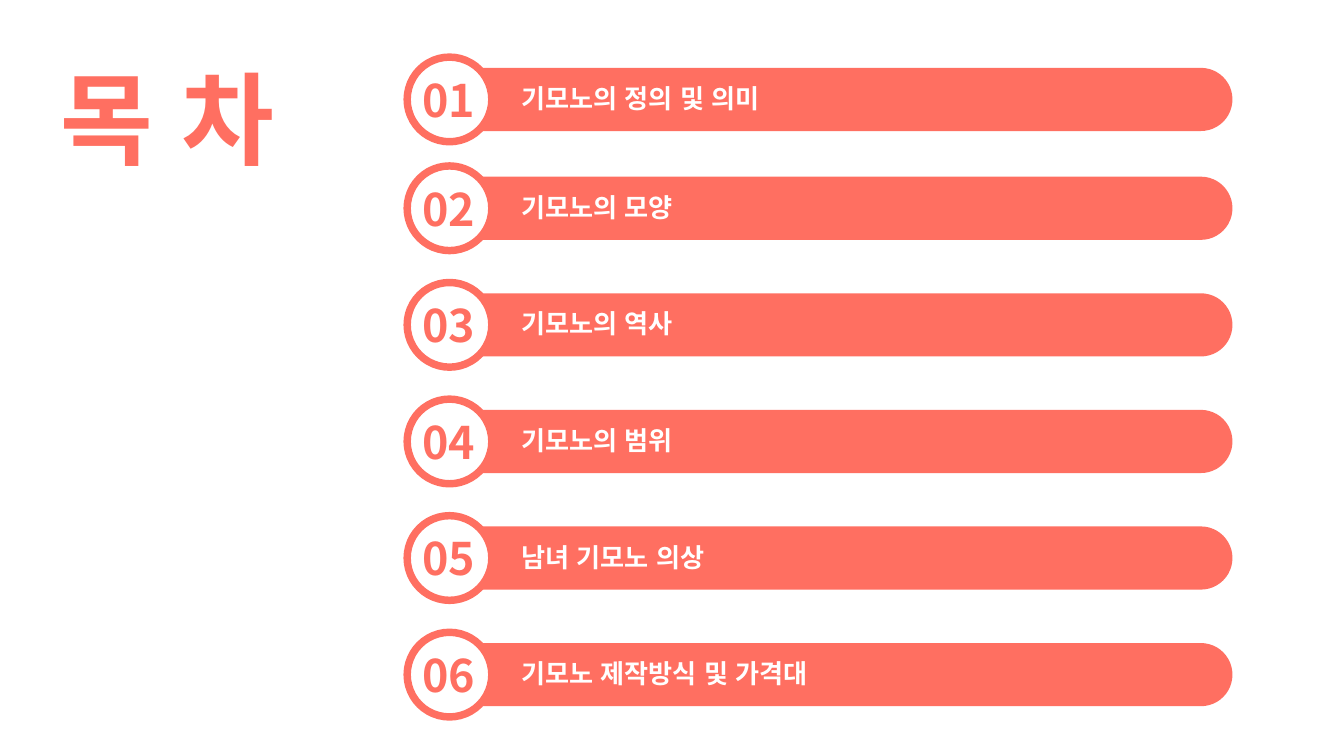
from lxml import etree
from pptx import Presentation
from pptx.dml.color import RGBColor
from pptx.enum.lang import MSO_LANGUAGE_ID
from pptx.enum.shapes import MSO_SHAPE
from pptx.enum.text import MSO_ANCHOR, MSO_AUTO_SIZE, PP_ALIGN
from pptx.oxml.ns import qn
from pptx.util import Inches, Pt

CORAL = RGBColor(0xFF, 0x6F, 0x61)
WHITE = RGBColor(0xFF, 0xFF, 0xFF)
FONT = "Noto Sans CJK KR"
KOREAN = MSO_LANGUAGE_ID.KOREAN
HALF_ROUND_BAR = MSO_SHAPE.ROUND_2_SAME_RECTANGLE
OVAL = MSO_SHAPE.OVAL
MIDDLE, TOP = MSO_ANCHOR.MIDDLE, MSO_ANCHOR.TOP
LEFT, CENTER = PP_ALIGN.LEFT, PP_ALIGN.CENTER
GROW = MSO_AUTO_SIZE.SHAPE_TO_FIT_TEXT

TOPICS = [
    "기모노의 정의 및 의미",
    "기모노의 모양",
    "기모노의 역사",
    "기모노의 범위",
    "남녀 기모노 의상",
    "기모노 제작방식 및 가격대",
]
# The first row stands apart; the others are evenly spaced
FIRST_ROW, SECOND_ROW, LAST_ROW = 0.74, 1.55, 5.02
ROW_PITCH = (LAST_ROW - SECOND_ROW) / (len(TOPICS) - 2)


class ContentsSlide:
    def __init__(self, slide):
        self.slide = slide

    def shape(self, parent, preset, left, top, width, height, fill):
        shape = parent.shapes.add_shape(
            preset, Inches(left), Inches(top), Inches(width), Inches(height))
        shape.shadow.inherit = False
        shape.fill.solid()
        shape.fill.fore_color.rgb = fill
        shape.line.fill.background()
        return shape

    def bar(self, parent, left, middle, length, thickness):
        # A tall shape turned a quarter so its round end points right
        bar = self.shape(parent, HALF_ROUND_BAR,
                         left + (length - thickness) / 2, middle - length / 2,
                         thickness, length, CORAL)
        bar.adjustments[0] = 0.5
        bar.adjustments[1] = 0
        bar.rotation = 90

    def ring(self, parent, left, middle, diameter):
        ring = self.shape(parent, OVAL, left, middle - diameter / 2,
                          diameter, diameter, WHITE)
        ring.line.color.rgb = CORAL
        ring.line.width = Pt(4)

    def text(self, parent, words, left, top, width, height, size, color,
             align=LEFT, anchor=MIDDLE, wrap=True, inset=0.05):
        box = parent.shapes.add_textbox(
            Inches(left), Inches(top), Inches(width), Inches(height))
        frame = box.text_frame
        frame.word_wrap = wrap
        frame.auto_size = GROW
        frame.vertical_anchor = anchor
        frame.margin_top = frame.margin_bottom = Inches(inset)
        paragraph = frame.paragraphs[0]
        paragraph.alignment = align
        run = paragraph.add_run()
        run.text = words
        run.font.size = Pt(size)
        run.font.bold = True
        run.font.language_id = KOREAN
        run.font.color.rgb = color
        run.font.name = FONT
        # Hangul takes the East Asian typeface
        east_asian = etree.SubElement(run._r.get_or_add_rPr(), qn("a:ea"))
        east_asian.set("typeface", FONT)

    def row(self, number, topic, middle):
        group = self.slide.shapes.add_group_shape()
        self.bar(group, 3.35, middle, 5.82, 0.47)
        self.ring(group, 3.03, middle, 0.63)
        self.text(group, f"{number:02}", 3.03, middle - 0.2, 0.62, 0.4,
                  24, CORAL, align=CENTER, inset=0)
        self.text(group, topic, 3.78, middle - 0.18, 5.2, 0.34, 14, WHITE)


def main():
    deck = Presentation()
    deck.slide_width = Inches(10)
    deck.slide_height = Inches(10 * 9 / 16)
    slide = deck.slides.add_slide(deck.slide_layouts[6])
    contents = ContentsSlide(slide)

    # Title
    contents.text(slide, "목 차", 0.35, 0.37, 1.98, 1.01, 54, CORAL,
                  anchor=TOP, wrap=False)

    # Numbered topics
    for index, topic in enumerate(TOPICS):
        middle = SECOND_ROW + (index - 1) * ROW_PITCH if index else FIRST_ROW
        contents.row(index + 1, topic, middle)

    deck.save("out.pptx")


if __name__ == "__main__":
    main()
